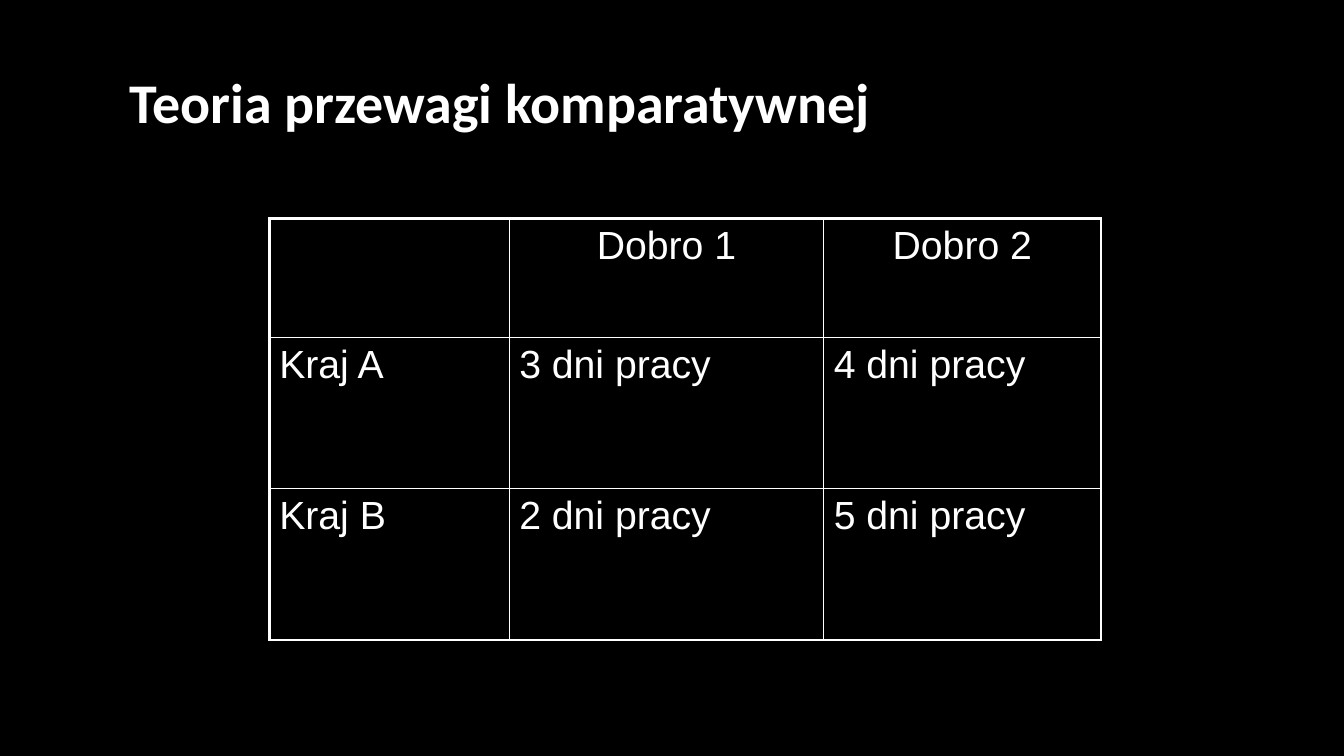
from lxml import etree
from pptx import Presentation
from pptx.dml.color import RGBColor
from pptx.enum.text import MSO_ANCHOR, PP_ALIGN
from pptx.oxml.ns import qn
from pptx.util import Inches, Pt

MIDDLE = MSO_ANCHOR.MIDDLE
LEFT, CENTER = PP_ALIGN.LEFT, PP_ALIGN.CENTER
BLACK, WHITE = "000000", "FFFFFF"
OUTER, INNER = 2.25, 1


def color(hex_text):
    return RGBColor.from_string(hex_text)


def add_border(cell, side, width):
    line = etree.SubElement(cell._tc.get_or_add_tcPr(), qn(f"a:ln{side}"), w=str(Pt(width)))
    fill = etree.SubElement(line, qn("a:solidFill"))
    etree.SubElement(fill, qn("a:srgbClr"), val=WHITE)


prs = Presentation()
prs.slide_width, prs.slide_height = Inches(13.33), Inches(7.5)
slide = prs.slides.add_slide(prs.slide_layouts[6])
slide.background.fill.solid()
slide.background.fill.fore_color.rgb = color(BLACK)

# Title
title = slide.shapes.add_textbox(Inches(1.19), Inches(0.3), Inches(9), Inches(1.5))
title.text_frame.word_wrap = True
title.text_frame.vertical_anchor = MIDDLE
heading = title.text_frame.paragraphs[0]
heading.text = "Teoria przewagi komparatywnej"
heading.line_spacing = 0.9
heading.font.name = "Calibri"
heading.font.size = Pt(40)
heading.font.bold = True
heading.font.color.rgb = color(WHITE)

# Labour needed for each good in each country
labour = [
    ["", "Dobro 1", "Dobro 2"],
    ["Kraj A", "3 dni pracy", "4 dni pracy"],
    ["Kraj B", "2 dni pracy", "5 dni pracy"],
]
col_widths = [2.38, 3.12, 2.75]
row_heights = [1.18, 1.5, 1.5]
last_row, last_col = len(row_heights) - 1, len(col_widths) - 1

table = slide.shapes.add_table(
    len(row_heights), len(col_widths), Inches(2.67), Inches(2.17),
    Inches(sum(col_widths)), Inches(sum(row_heights))).table
table.first_row = table.horz_banding = False
for column, width in zip(table.columns, col_widths):
    column.width = Inches(width)
for row, height in zip(table.rows, row_heights):
    row.height = Inches(height)

for r, entries in enumerate(labour):
    for c, entry in enumerate(entries):
        cell = table.cell(r, c)
        # Thick lines on the outer edge, thin ones inside
        edges = {"L": c == 0, "R": c == last_col, "T": r == 0, "B": r == last_row}
        for side, is_outer in edges.items():
            add_border(cell, side, OUTER if is_outer else INNER)
        cell.fill.solid()
        cell.fill.fore_color.rgb = color(BLACK)

        paragraph = cell.text_frame.paragraphs[0]
        paragraph.text = entry
        paragraph.alignment = CENTER if r == 0 else LEFT
        paragraph.font.name = "Arial"
        paragraph.font.size = Pt(28)
        paragraph.font.color.rgb = color(WHITE)

prs.save("out.pptx")
